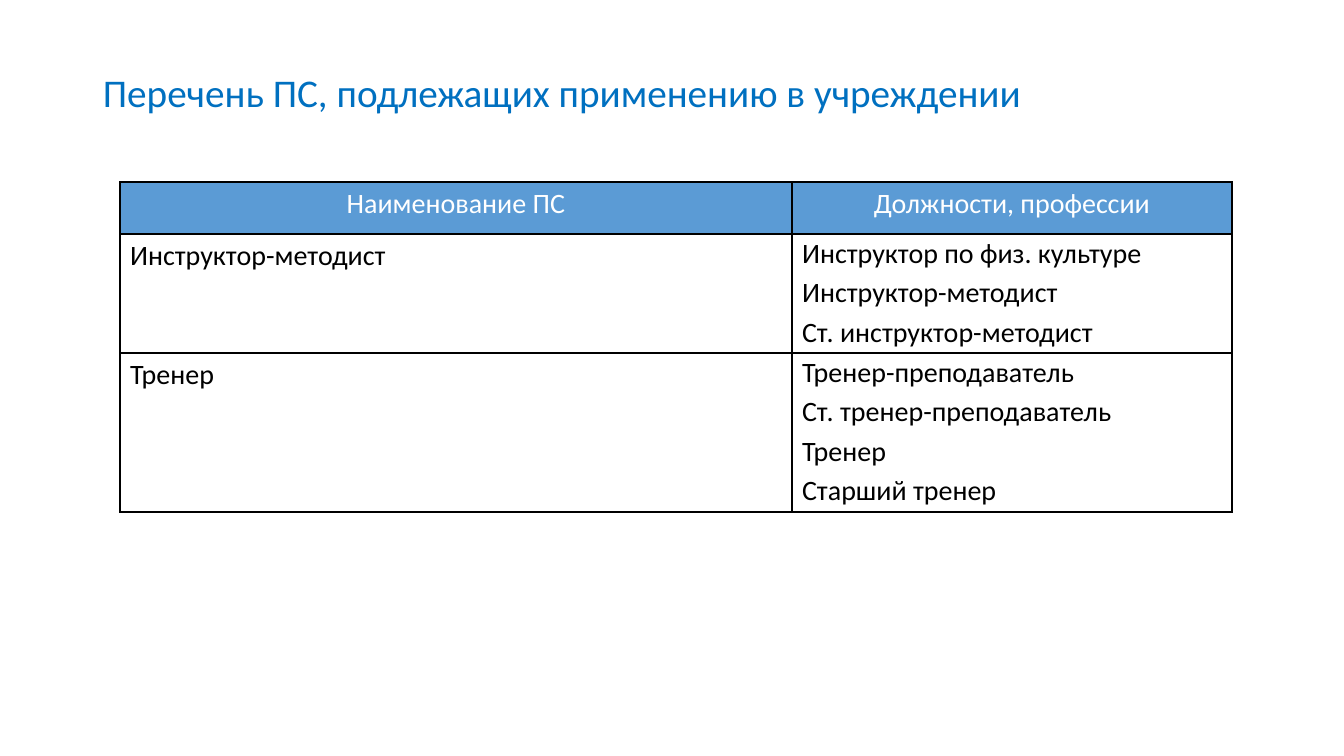
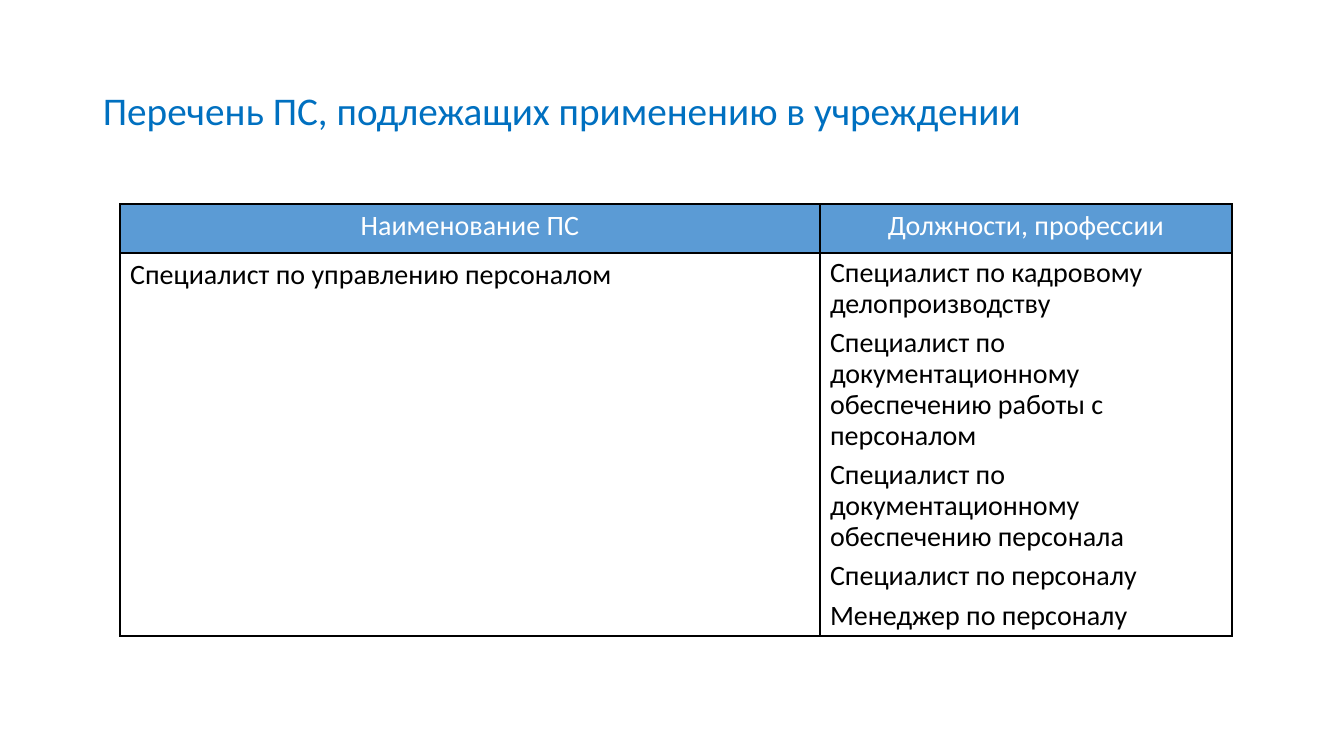
from lxml import etree
from pptx import Presentation
from pptx import util as u
from pptx.dml.color import RGBColor
from pptx.enum import text
from pptx.oxml import ns

TITLE_BLUE = RGBColor(0x00, 0x70, 0xC0)
HEADER_BLUE = RGBColor(0x5B, 0x9B, 0xD5)
WHITE = RGBColor(0xFF, 0xFF, 0xFF)
BLACK = RGBColor(0x00, 0x00, 0x00)

FONT = "Calibri"
EMU_PER_PX = 914400 / 100.8
TITLE = "Перечень ПС, подлежащих применению в учреждении"
HEADERS = ("Наименование ПС", "Должности, профессии")

SLIDES = [
    {
        "title_top": 22,
        "table_top": 182,
        "columns": (672, 440),
        "heights": (52, 119, 159),
        "rows": [
            ("Инструктор-методист", [
                "Инструктор по физ. культуре",
                "Инструктор-методист",
                "Ст. инструктор-методист",
            ]),
            ("Тренер", [
                "Тренер-преподаватель",
                "Ст. тренер-преподаватель",
                "Тренер",
                "Старший тренер",
            ]),
        ],
    },
    {
        "title_top": 40,
        "table_top": 204,
        "columns": (700, 412),
        "heights": (49, 383),
        "rows": [
            ("Специалист по управлению персоналом", [
                "Специалист по кадровому делопроизводству",
                "Специалист по документационному обеспечению работы с персоналом",
                "Специалист по документационному обеспечению персонала",
                "Специалист по персоналу",
                "Менеджер по персоналу",
            ]),
        ],
    },
]


def px(length):
    """Turn whole pixels into EMU."""
    return u.Emu(round(length * EMU_PER_PX))


class Deck:
    """Hold the presentation, its style and the current slide."""

    def __init__(self):
        """Start an empty wide presentation."""
        self.presentation = Presentation()
        self.presentation.slide_width = px(1344)
        self.presentation.slide_height = px(756)
        self.slide = None

    def add_slide(self):
        """Add a blank slide and make it current."""
        self.slide = self.presentation.slides.add_slide(self.presentation.slide_layouts[6])

    def style(self, paragraph, size, color):
        """Set the font of a whole paragraph."""
        font = paragraph.font
        font.name, font.size, font.bold = FONT, u.Pt(size), False
        font.color.rgb = color

    def title(self, top):
        """Draw the shared title at the given height."""
        shape = self.slide.shapes.add_textbox(px(93), px(top), px(1159), px(146))
        frame = shape.text_frame
        frame.word_wrap = True
        frame.vertical_anchor = text.MSO_ANCHOR.MIDDLE
        paragraph = frame.paragraphs[0]
        paragraph.text = TITLE
        paragraph.line_spacing = 0.9
        self.style(paragraph, 28, TITLE_BLUE)

    def borders(self, cell):
        """Draw a thin black line on each side of a cell."""
        properties = cell._tc.get_or_add_tcPr()
        for side in ("lnL", "lnR", "lnT", "lnB"):
            line = etree.SubElement(properties, ns.qn(f"a:{side}"), w=str(u.Pt(1)))
            fill = etree.SubElement(line, ns.qn("a:solidFill"))
            etree.SubElement(fill, ns.qn("a:srgbClr"), val=str(BLACK))

    def cell(self, cell, lines, color=BLACK, fill=WHITE, alignment=text.PP_ALIGN.LEFT, listed=False):
        """Fill a cell with one paragraph for each line."""
        self.borders(cell)
        cell.fill.solid()
        cell.fill.fore_color.rgb = fill
        cell.text_frame.text = "\n".join(lines)
        for paragraph in cell.text_frame.paragraphs:
            paragraph.alignment = alignment
            if listed:
                paragraph.line_spacing = 0.9
                paragraph.space_before = u.Pt(6)
            self.style(paragraph, 20, color)

    def table(self, top, columns, heights, rows):
        """Draw the table of standards and their positions."""
        table = self.slide.shapes.add_table(
            len(heights), len(columns), px(120), px(top), px(sum(columns)), px(sum(heights))
        ).table
        table.first_row = table.horz_banding = False
        for column, width in zip(table.columns, columns):
            column.width = px(width)
        for row, height in zip(table.rows, heights):
            row.height = px(height)
        for index, header in enumerate(HEADERS):
            self.cell(table.cell(0, index), [header], WHITE, HEADER_BLUE, text.PP_ALIGN.CENTER)
        for index, (name, positions) in enumerate(rows, start=1):
            self.cell(table.cell(index, 0), [name])
            self.cell(table.cell(index, 1), positions, listed=True)


def main():
    """Build and save the slides."""
    deck = Deck()
    for content in SLIDES:
        deck.add_slide()
        deck.title(content["title_top"])
        deck.table(content["table_top"], content["columns"], content["heights"], content["rows"])
    deck.presentation.save("out.pptx")


if __name__ == "__main__":
    main()
